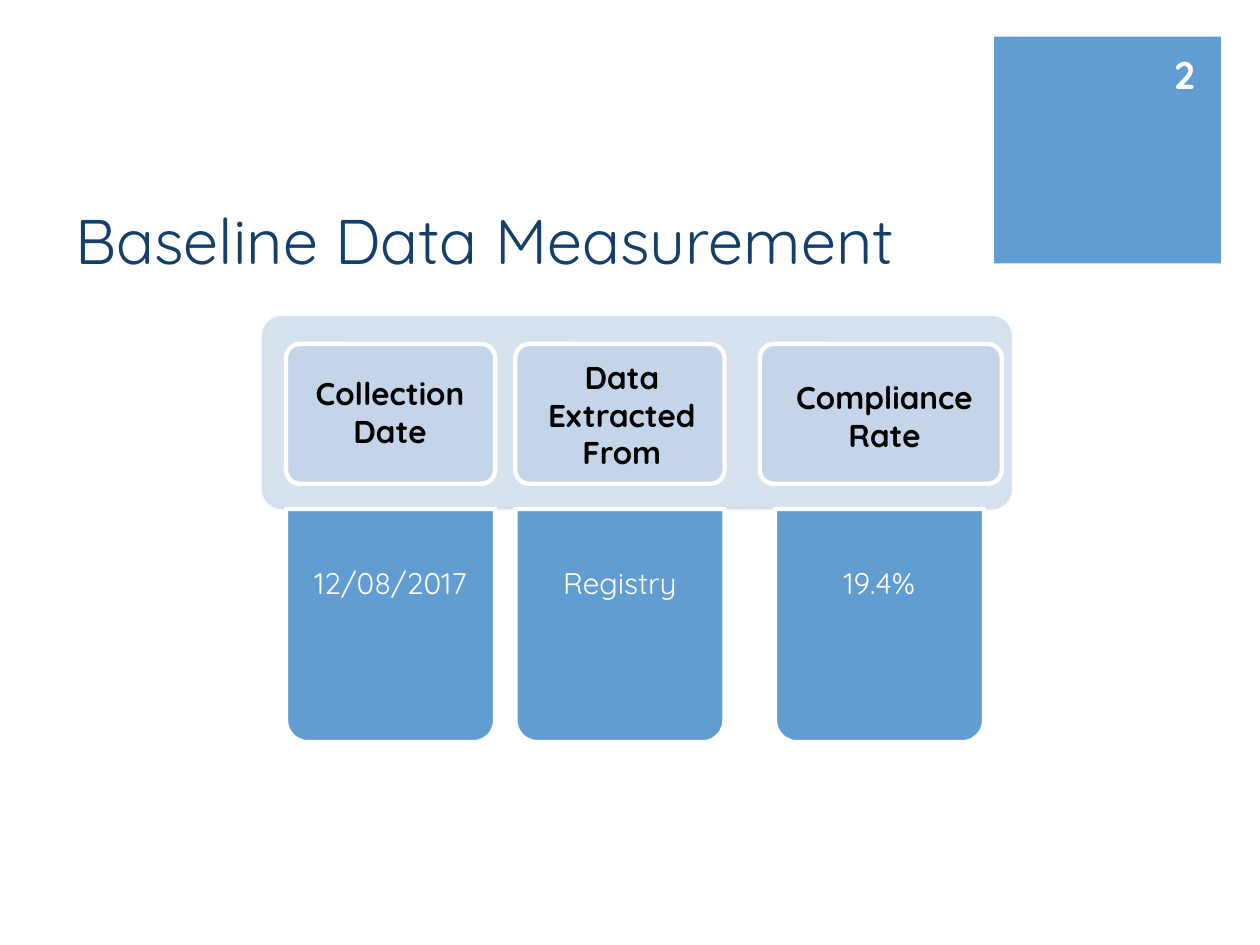
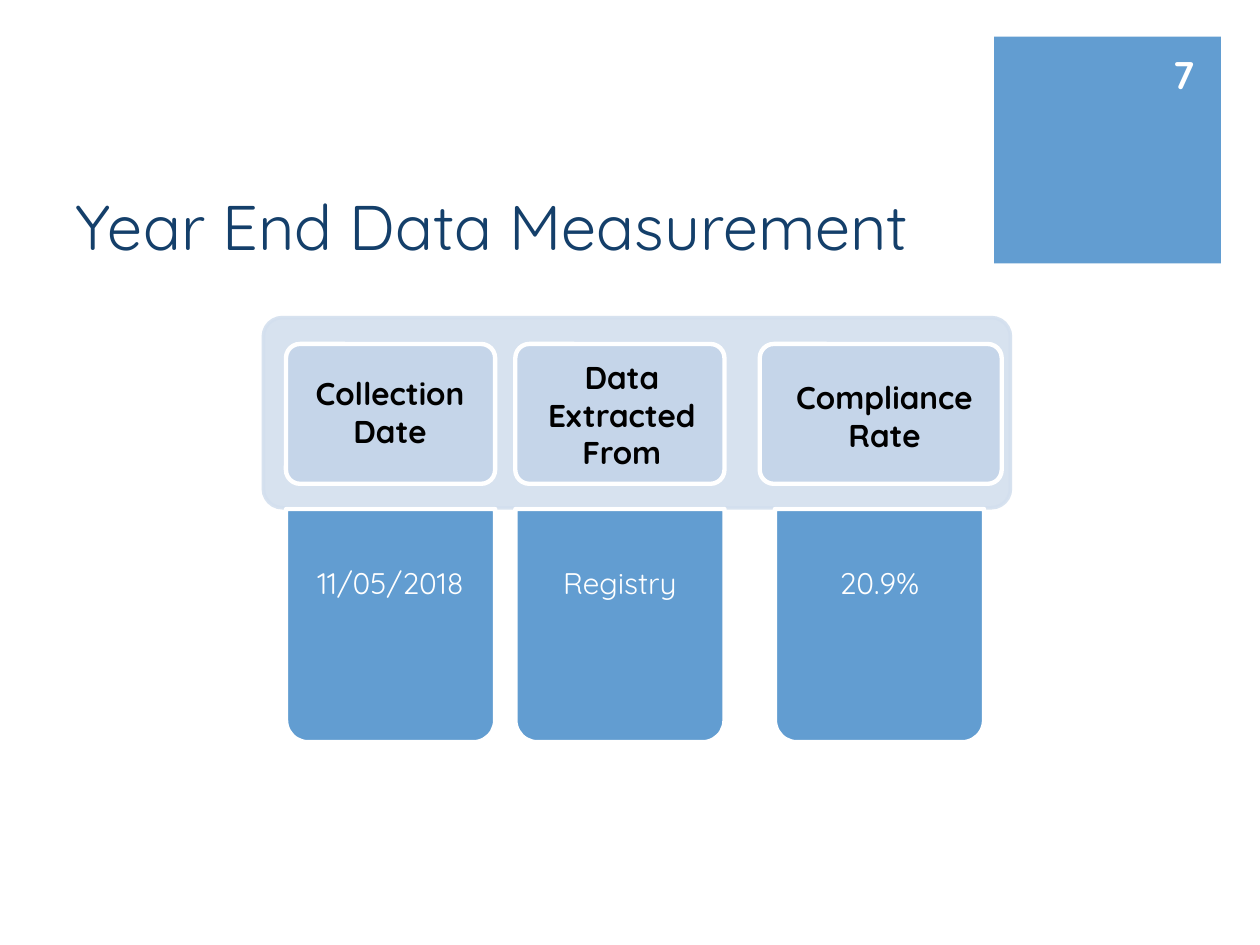
"""Build the baseline and year-end data measurement slides."""
from lxml.etree import SubElement
from pptx import Presentation
from pptx.dml.color import RGBColor
from pptx.enum.shapes import MSO_SHAPE
from pptx.enum.text import MSO_ANCHOR, PP_ALIGN
from pptx.oxml.ns import qn
from pptx.util import Inches, Pt

COLORS = {"blue": "629DD1", "navy": "143F6A", "panel": "D3DFEE",
          "header": "C5D5E9", "white": "FFFFFF", "black": "000000"}
FONT = "Quicksand"


def add_block(slide, kind, left, top, width, height, fill, line=None,
              weight=2.5, corners=(), rotation=0, opacity=100):
    block = slide.shapes.add_shape(kind, Inches(left), Inches(top), Inches(width), Inches(height))
    block.shadow.inherit = False
    block.rotation = rotation
    for index, corner in enumerate(corners):
        block.adjustments[index] = corner
    block.fill.solid()
    block.fill.fore_color.rgb = RGBColor.from_string(COLORS[fill])
    if line:
        block.line.color.rgb = RGBColor.from_string(COLORS[line])
        block.line.width = Pt(weight)
    else:
        block.line.fill.background()
    if opacity < 100:
        for color in block._element.spPr.iter(qn("a:srgbClr")):
            SubElement(color, qn("a:alpha"), val=str(opacity * 1000))
    return block


def add_text(slide, text, left, top, width, height, size, color, bold=False,
             align=PP_ALIGN.CENTER, anchor=MSO_ANCHOR.MIDDLE, margin=None,
             spacing=None, holder=None):
    holder = holder or slide.shapes.add_textbox(
        Inches(left), Inches(top), Inches(width), Inches(height))
    frame = holder.text_frame
    frame.word_wrap = True
    frame.vertical_anchor = anchor
    if margin is not None:
        frame.margin_left = frame.margin_right = Inches(margin)
        frame.margin_top = frame.margin_bottom = Inches(margin)
    frame.text = text
    for paragraph in frame.paragraphs:
        paragraph.alignment = align
        paragraph.line_spacing = spacing
        paragraph.font.name = FONT
        paragraph.font.size = Pt(size)
        paragraph.font.bold = bold
        paragraph.font.color.rgb = RGBColor.from_string(COLORS[color])


measurements = [
    ("Baseline Data Measurement", 7.12, 1.25, "2", ["12/08/2017", "Registry", "19.4%"]),
    ("Year End Data Measurement", 7.37, 1.14, "7", ["11/05/2018", "Registry", "20.9%"]),
]
columns = [
    ("Collection\nDate", (2.27, 1.66), 2.27, (2.35, 2.92, 1.49, 0.71)),
    ("Data Extracted\nFrom", (4.09, 1.66), 4.09, (4.19, 2.79, 1.49, 1.01)),
    ("Compliance Rate", (6.03, 1.92), 6.15, (6.16, 2.95, 1.72, 0.71)),
]

deck = Presentation()
deck.slide_width, deck.slide_height = Inches(10), Inches(7.5)

for title, title_width, title_height, number, values in measurements:
    slide = deck.slides.add_slide(deck.slide_layouts[6])
    add_block(slide, MSO_SHAPE.RECTANGLE, 7.89, 0.29, 1.8, 1.8, "blue")
    add_text(slide, title, 0.5, 1, title_width, title_height, size=36, color="navy",
             align=PP_ALIGN.LEFT, anchor=MSO_ANCHOR.BOTTOM)
    add_text(slide, number, 9.03, 0.39, 0.55, 0.4, size=22, color="white", bold=True,
             align=PP_ALIGN.RIGHT)
    add_block(slide, MSO_SHAPE.ROUNDED_RECTANGLE, 2.09, 2.52, 5.93, 1.51, "panel",
              line="panel", weight=2, corners=[0.1], opacity=90)

    for (heading, (header_left, header_width), value_left, label_box), value in zip(columns, values):
        add_block(slide, MSO_SHAPE.ROUNDED_RECTANGLE, header_left, 2.73, header_width, 1.11,
                  "header", line="white", corners=[0.1])
        add_block(slide, MSO_SHAPE.ROUND_2_SAME_RECTANGLE, value_left, 4.04, 1.66, 1.85,
                  "blue", line="white", corners=[0.105, 0], rotation=180)
        add_text(slide, value, value_left + 0.05, 4.39, 1.56, 1.45, size=17, color="white",
                 anchor=MSO_ANCHOR.TOP, margin=0.13, spacing=0.9)
        label = add_block(slide, MSO_SHAPE.RECTANGLE, *label_box, "header",
                          line="header", weight=0.75)
        add_text(slide, heading, *label_box, size=18, color="black", bold=True,
                 anchor=MSO_ANCHOR.TOP, holder=label)

deck.save("out.pptx")
